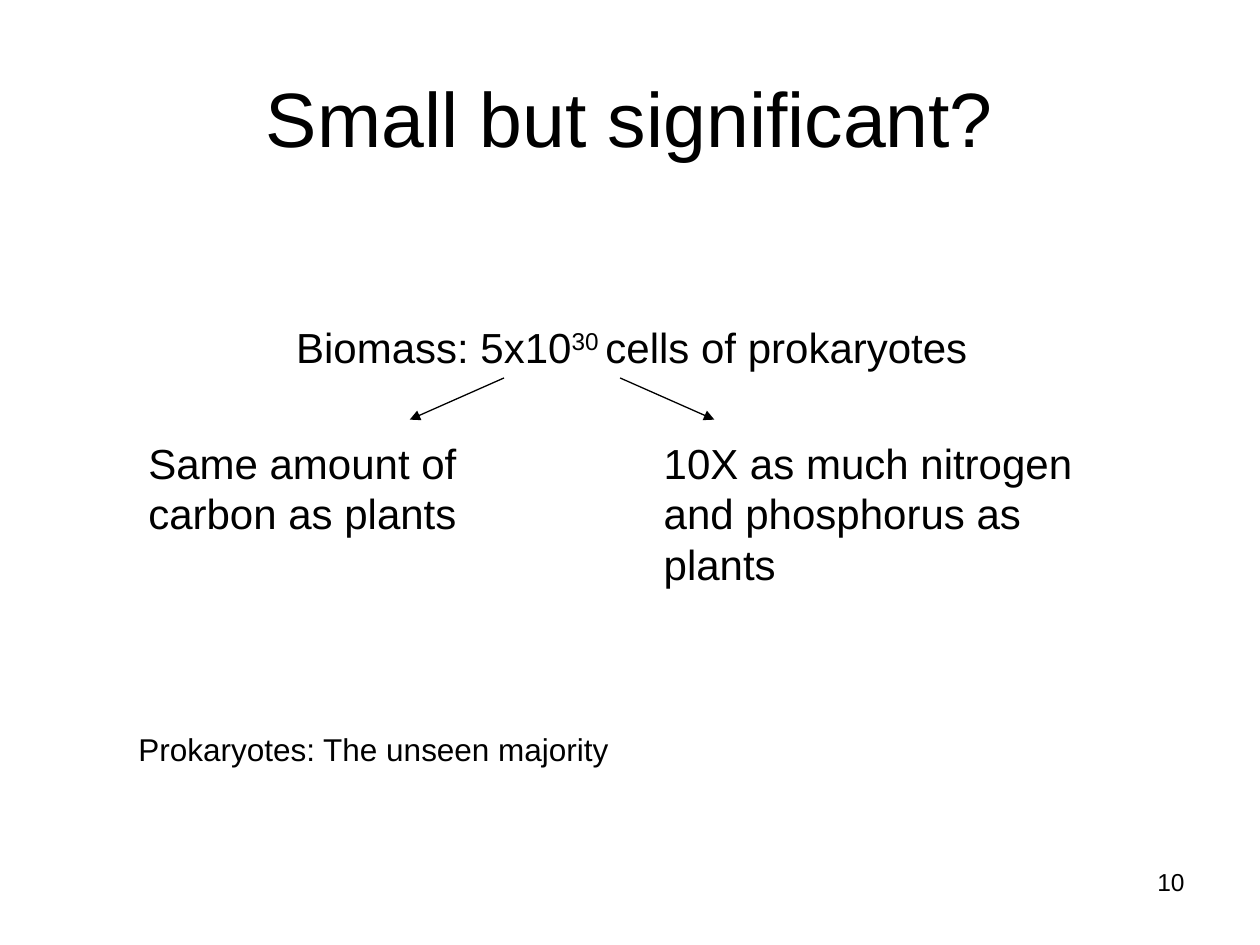
from lxml import etree
from pptx import Presentation
from pptx.dml.color import RGBColor
from pptx.enum.shapes import MSO_CONNECTOR as Conn
from pptx.enum.text import MSO_ANCHOR as Anchor, MSO_AUTO_SIZE as AutoSize, PP_ALIGN as Align
from pptx.oxml.ns import qn
from pptx.util import Cm, Pt

BLACK = RGBColor(0, 0, 0)
WHITE = RGBColor(255, 255, 255)
FONT = "Arial"


def format_run(r, size):
    r.font.name = FONT
    r.font.size = Pt(size)
    r.font.color.rgb = BLACK


def add_text(s, box, parts, size, wrap=True, align=Align.LEFT):
    tb = s.shapes.add_textbox(*map(Cm, box))
    tf = tb.text_frame
    tf.word_wrap = wrap
    tf.auto_size = AutoSize.SHAPE_TO_FIT_TEXT
    p = tf.paragraphs[0]
    p.alignment = align
    for part in parts:
        r = p.add_run()
        r.text = part
        format_run(r, size)
    return p


def add_arrow(s, x1, y1, x2, y2):
    c = s.shapes.add_connector(Conn.STRAIGHT, Cm(x1), Cm(y1), Cm(x2), Cm(y2))
    c.line.color.rgb = BLACK
    c.line.width = Pt(0.75)
    etree.SubElement(c.line._get_or_add_ln(), qn("a:tailEnd"), type="triangle")
    etree.SubElement(c._element.spPr, qn("a:effectLst"))


def add_title(s, box, text):
    sp = s.shapes.title
    sp.left, sp.top, sp.width, sp.height = map(Cm, box)
    tf = sp.text_frame
    tf.text = text
    tf.vertical_anchor = Anchor.MIDDLE
    p = tf.paragraphs[0]
    p.alignment = Align.CENTER
    format_run(p.runs[0], 44)


def add_biomass_diagram(s, left, top):
    p = add_text(s, (left + 2.98, top, 14.15, 1.27),
                 ["Biomass: 5x10", "30 ", "cells of prokaryotes"], 24, wrap=False)
    p.runs[1].font._element.set("baseline", "30000")
    branches = [
        ("Same amount of carbon as plants", 0, 8.26, 2.29, 7.42, -1.9),
        ("10X as much nitrogen and phosphorus as plants", 10.39, 9.58, 3.3, 9.76, 1.9),
    ]
    for text, x, width, height, start, run in branches:
        add_arrow(s, left + start, top + 1.27, left + start + run, top + 2.11)
        add_text(s, (left + x, top + 2.34, width, height), [text], 24)


def main():
    prs = Presentation()
    prs.slide_width, prs.slide_height = Cm(25.4), Cm(19.05)
    s = prs.slides.add_slide(prs.slide_layouts[5])
    s.background.fill.solid()
    s.background.fill.fore_color.rgb = WHITE
    add_title(s, (1.27, 0.76, 22.86, 3.18), "Small but significant?")
    add_biomass_diagram(s, 2.74, 6.35)
    add_text(s, (2.54, 14.6, 10.08, 1.02), ["Prokaryotes: The unseen majority"], 18, wrap=False)
    add_text(s, (18.21, 17.35, 5.92, 1.32), ["10"], 14, align=Align.RIGHT)
    prs.save("out.pptx")


if __name__ == "__main__":
    main()
